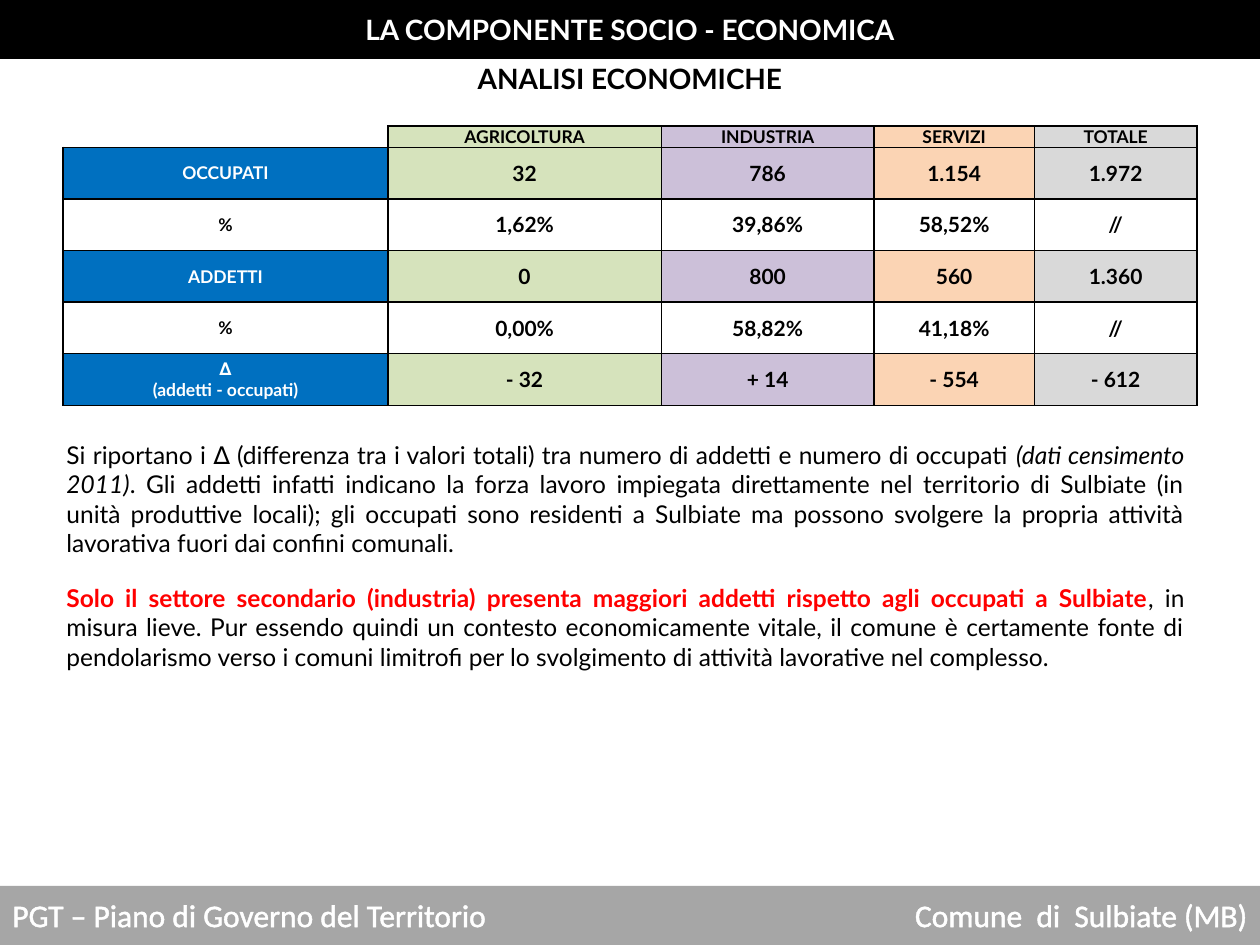
from dataclasses import dataclass

from lxml import etree
from pptx import Presentation
from pptx.dml.color import RGBColor
from pptx.enum import shapes, text
from pptx.oxml import ns
from pptx.util import Cm, Pt

COLORS = {
    "black": "000000", "white": "FFFFFF", "red": "FF0000", "footer": "A6A6A6",
    "label": "0070C0", "agriculture": "D6E3BC", "industry": "CCC0D9",
    "services": "FBD4B4", "total": "D9D9D9",
}
ALIGN = text.PP_ALIGN
SLIDE_W, SLIDE_H, BAR_H = 25.4, 19.05, 1.19


@dataclass
class Span:
    text: str
    color: str | None = None
    bold: bool | None = None
    italic: bool | None = None


@dataclass
class Block:
    left: float
    top: float
    width: float
    height: float
    spans: list[Span]
    size: float
    align: text.PP_ALIGN
    font: str = "Lato"
    color: str = "black"
    bold: bool = False
    outlined: bool = False


@dataclass
class Column:
    header: str
    width: float
    fill: str
    values: list[str]


def rgb(name: str) -> RGBColor:
    return RGBColor.from_string(COLORS[name])


def add_line(parent, tag: str, width: float, color: str | None, index: int):
    """Insert a line element, without colour for an invisible line."""
    line = etree.Element(ns.qn(tag), w=str(Pt(width)))
    if color:
        fill = etree.SubElement(line, ns.qn("a:solidFill"))
        etree.SubElement(fill, ns.qn("a:srgbClr"), val=COLORS[color])
    else:
        etree.SubElement(line, ns.qn("a:noFill"))
    parent.insert(index, line)


def style_paragraph(paragraph, size: float, color: str, bold: bool,
                    align: text.PP_ALIGN, name: str = "Lato"):
    paragraph.alignment = align
    font = paragraph.font
    font.name, font.size, font.bold = name, Pt(size), bold
    font.color.rgb = rgb(color)


def add_bar(slide, top: float, color: str):
    bar = slide.shapes.add_shape(shapes.MSO_SHAPE.RECTANGLE, 0, Cm(top), Cm(SLIDE_W), Cm(BAR_H))
    bar.shadow.inherit = False
    bar.fill.solid()
    bar.fill.fore_color.rgb = rgb(color)
    bar.line.fill.background()


def write_block(shape, block: Block):
    shape.left, shape.top = Cm(block.left), Cm(block.top)
    shape.width, shape.height = Cm(block.width), Cm(block.height)
    frame = shape.text_frame
    frame.word_wrap = True
    frame.auto_size = text.MSO_AUTO_SIZE.SHAPE_TO_FIT_TEXT
    frame.vertical_anchor = text.MSO_ANCHOR.TOP
    paragraph = frame.paragraphs[0]
    style_paragraph(paragraph, block.size, block.color, block.bold, block.align, block.font)
    for span in block.spans:
        run = paragraph.add_run()
        run.text = span.text
        run.font.bold, run.font.italic = span.bold, span.italic
        if span.color:
            run.font.color.rgb = rgb(span.color)
        if block.outlined:
            add_line(run.font._element, "a:ln", 1.45, block.color, 0)


def add_block(slide, block: Block):
    write_block(slide.shapes.add_textbox(0, 0, Cm(1), Cm(1)), block)


def style_cell(cell, fill: str | None, hidden: tuple[str, ...] = ()):
    cell.margin_left = cell.margin_right = Cm(0.18)
    cell.margin_top = cell.margin_bottom = 0
    cell.vertical_anchor = text.MSO_ANCHOR.MIDDLE
    properties = cell._tc.get_or_add_tcPr()
    for index, side in enumerate("LRTB"):
        add_line(properties, f"a:ln{side}", 1, None if side in hidden else "black", index)
    if fill:
        cell.fill.solid()
        cell.fill.fore_color.rgb = rgb(fill)
    else:
        cell.fill.background()


def fill_cell(cell, content: str, size: float, color: str = "black"):
    cell.text = content
    for paragraph in cell.text_frame.paragraphs:
        style_paragraph(paragraph, size, color, True, ALIGN.CENTER)


def add_sector_table(slide, columns: list[Column]):
    row_heights = [0.43] + [1.04] * 5
    table = slide.shapes.add_table(
        len(row_heights), len(columns), Cm(1.27), Cm(2.54),
        Cm(sum(c.width for c in columns)), Cm(sum(row_heights))).table
    table.first_row = table.horz_banding = False
    for row, height in zip(table.rows, row_heights):
        row.height = Cm(height)
    for x, column in enumerate(columns):
        table.columns[x].width = Cm(column.width)
        for y, content in enumerate([column.header] + column.values):
            cell = table.cell(y, x)
            is_percent = y in (2, 4)
            if not content:  # empty corner, kept as low as the header row
                style_cell(cell, None, hidden=("L", "T"))
                etree.SubElement(cell.text_frame.paragraphs[0]._p,
                                 ns.qn("a:endParaRPr"), sz="800")
                continue
            style_cell(cell, None if is_percent else column.fill)
            on_blue = x == 0 and not is_percent
            fill_cell(cell, content, 10 if x == 0 or y == 0 else 12,
                      "white" if on_blue else "black")


HEADING = Block(0, 0.13, SLIDE_W, 0.94, [Span("LA COMPONENTE SOCIO - ECONOMICA")],
                16, ALIGN.CENTER, color="white", bold=True)
BLOCKS = [
    # Footer
    Block(0, 17.93, 12.01, 1.02, [Span("PGT – Piano di Governo del Territorio")],
          18, ALIGN.LEFT, "Calibri", "white", outlined=True),
    Block(16.1, 17.93, 9.3, 1.02, [Span("Comune  di  Sulbiate (MB)")],
          18, ALIGN.RIGHT, "Calibri", "white", outlined=True),
    # Subtitle
    Block(0, 1.12, SLIDE_W, 0.94, [Span("ANALISI ECONOMICHE")], 16, ALIGN.CENTER, bold=True),
    # Commentary
    Block(1.09, 8.74, 23.04, 2.64, [
        Span("Si riportano i ∆ (differenza tra i valori totali) tra numero di addetti e "
             "numero di occupati "),
        Span("(dati censimento 2011)", italic=True),
        Span(". Gli addetti infatti indicano la forza lavoro impiegata direttamente nel "
             "territorio di Sulbiate (in unità produttive locali); gli occupati sono residenti "
             "a Sulbiate ma possono svolgere la propria attività lavorativa fuori dai confini "
             "comunali."),
    ], 14, ALIGN.JUSTIFY),
    Block(1.09, 11.63, 23.04, 2.06, [
        Span("Solo il settore secondario (industria) presenta maggiori addetti rispetto agli "
             "occupati a Sulbiate", color="red", bold=True),
        Span(", in misura lieve. Pur essendo quindi un contesto economicamente vitale, il "
             "comune è certamente fonte di pendolarismo verso i comuni limitrofi per lo "
             "svolgimento di attività lavorative nel complesso."),
    ], 14, ALIGN.JUSTIFY),
]
COLUMNS = [
    Column("", 6.55, "label", ["OCCUPATI", "%", "ADDETTI", "%", "∆\n(addetti - occupati)"]),
    Column("AGRICOLTURA", 5.51, "agriculture", ["32", "1,62%", "0", "0,00%", "- 32"]),
    Column("INDUSTRIA", 4.29, "industry", ["786", "39,86%", "800", "58,82%", "+ 14"]),
    Column("SERVIZI", 3.23, "services", ["1.154", "58,52%", "560", "41,18%", "- 554"]),
    Column("TOTALE", 3.28, "total", ["1.972", "//", "1.360", "//", "- 612"]),
]


def main():
    deck = Presentation()
    deck.slide_width, deck.slide_height = Cm(SLIDE_W), Cm(SLIDE_H)
    slide = deck.slides.add_slide(deck.slide_layouts[5])

    # Heading on its black bar
    add_bar(slide, 0, "black")
    heading = slide.shapes.title
    write_block(heading, HEADING)
    slide.shapes._spTree.append(heading._element)

    # Footer bar, texts and table
    add_bar(slide, SLIDE_H - BAR_H, "footer")
    for block in BLOCKS:
        add_block(slide, block)
    add_sector_table(slide, COLUMNS)
    deck.save("out.pptx")


if __name__ == "__main__":
    main()
